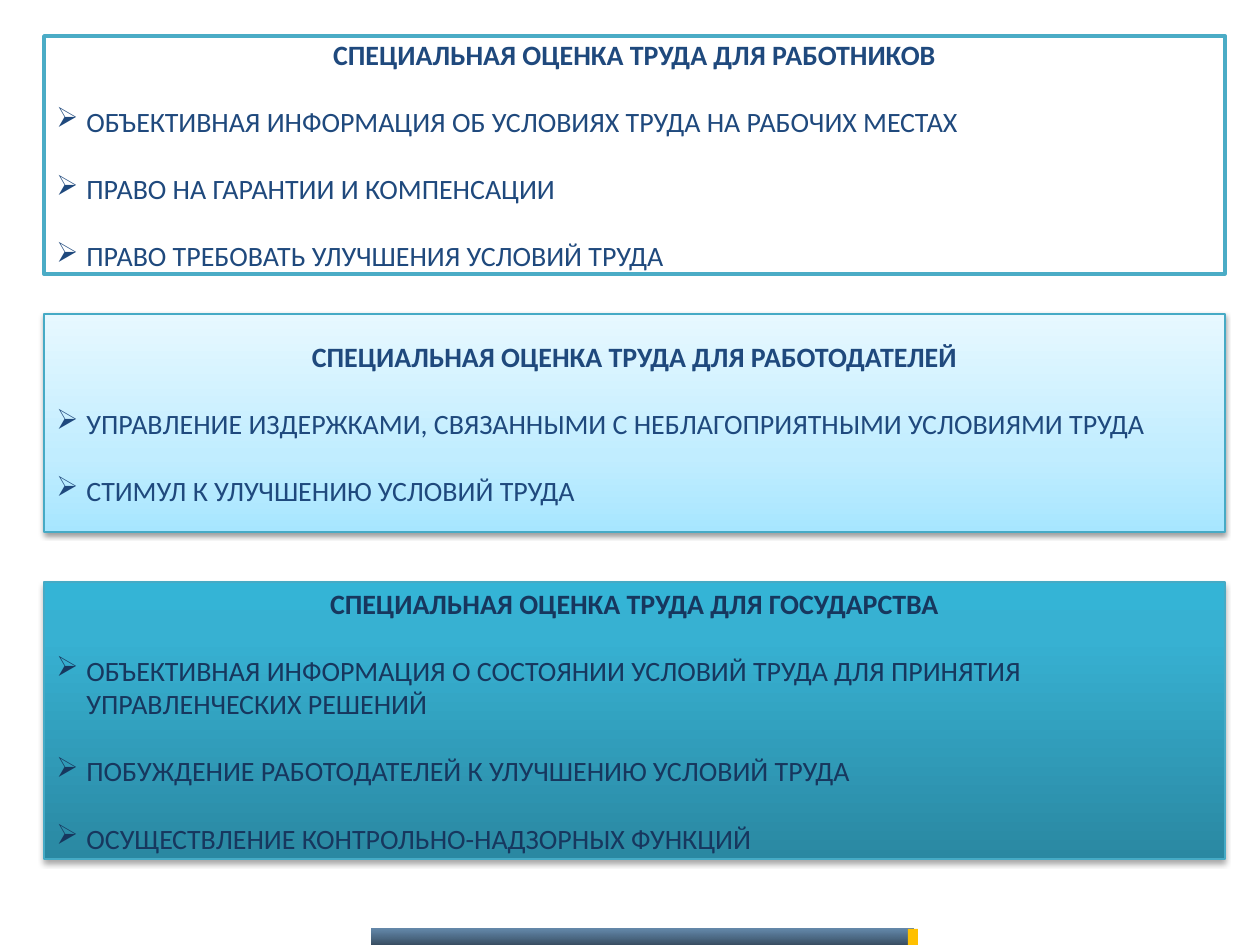
from dataclasses import dataclass

from pptx import Presentation
from pptx.dml.color import RGBColor
from pptx.enum.shapes import MSO_SHAPE
from pptx.enum.text import MSO_ANCHOR, PP_ALIGN
from pptx.oxml import parse_xml
from pptx.oxml.ns import nsdecls, qn
from pptx.util import Pt

PX = 914400 / 126


@dataclass(frozen=True)
class Theme:
    font: str = "Calibri"
    size: float = 16
    line_gap: float = 19.2
    navy: str = "1F497D"
    deep_navy: str = "17375E"
    white: str = "FFFFFF"
    teal: str = "4BACC6"
    teal_edge: str = "46AAC5"
    amber: str = "FFC000"
    pale_blue: tuple = ((0, "A7E6FF", 100), (35, "C1EDFF", 100), (100, "E7F8FF", 100))
    strong_blue: tuple = ((0, "2A88A2", 100), (80, "37B1D2", 100), (100, "34B4D6", 100))
    footer_blue: tuple = ((0, "003C73", 60), (100, "001C35", 80))


THEME = Theme()

PANELS = [
    {
        "box": (44, 36, 1181, 238),
        "heading": "СПЕЦИАЛЬНАЯ ОЦЕНКА ТРУДА ДЛЯ РАБОТНИКОВ",
        "benefits": [
            "ОБЪЕКТИВНАЯ ИНФОРМАЦИЯ ОБ УСЛОВИЯХ ТРУДА НА РАБОЧИХ МЕСТАХ",
            "ПРАВО НА ГАРАНТИИ И КОМПЕНСАЦИИ",
            "ПРАВО ТРЕБОВАТЬ УЛУЧШЕНИЯ УСЛОВИЙ ТРУДА",
        ],
        "fill": THEME.white, "edge": (THEME.teal, 2),
        "ink": THEME.navy, "shadow": None,
    },
    {
        "box": (44, 314, 1181, 218),
        "heading": "СПЕЦИАЛЬНАЯ ОЦЕНКА ТРУДА ДЛЯ РАБОТОДАТЕЛЕЙ",
        "benefits": [
            "УПРАВЛЕНИЕ ИЗДЕРЖКАМИ, СВЯЗАННЫМИ С НЕБЛАГОПРИЯТНЫМИ УСЛОВИЯМИ ТРУДА",
            "СТИМУЛ К УЛУЧШЕНИЮ УСЛОВИЙ ТРУДА",
        ],
        "fill": THEME.pale_blue, "edge": (THEME.teal_edge, 0.75),
        "ink": THEME.navy, "shadow": (38, 1.6),
    },
    {
        "box": (44, 582, 1181, 277),
        "heading": "СПЕЦИАЛЬНАЯ ОЦЕНКА ТРУДА ДЛЯ ГОСУДАРСТВА",
        "benefits": [
            "ОБЪЕКТИВНАЯ ИНФОРМАЦИЯ О СОСТОЯНИИ УСЛОВИЙ ТРУДА "
            "ДЛЯ ПРИНЯТИЯ УПРАВЛЕНЧЕСКИХ РЕШЕНИЙ",
            "ПОБУЖДЕНИЕ РАБОТОДАТЕЛЕЙ К УЛУЧШЕНИЮ УСЛОВИЙ ТРУДА",
            "ОСУЩЕСТВЛЕНИЕ КОНТРОЛЬНО-НАДЗОРНЫХ ФУНКЦИЙ",
        ],
        "fill": THEME.strong_blue, "edge": (THEME.teal_edge, 0.75),
        "ink": THEME.deep_navy, "shadow": (35, 1.8),
    },
]


def px(length):
    return round(length * PX)


def apply_format(target, values):
    for attribute, value in values.items():
        setattr(target, attribute, value)


def color_xml(color, opacity):
    return f'<a:srgbClr val="{color}"><a:alpha val="{opacity * 1000}"/></a:srgbClr>'


def fill_gradient(shape, stops, angle):
    stops_xml = "".join(
        f'<a:gs pos="{position * 1000}">{color_xml(color, opacity)}</a:gs>'
        for position, color, opacity in stops
    )
    geometry = shape._element.spPr.find(qn("a:prstGeom"))
    geometry.addnext(parse_xml(
        f'<a:gradFill {nsdecls("a")} rotWithShape="1"><a:gsLst>{stops_xml}</a:gsLst>'
        f'<a:lin ang="{angle * 60000}" scaled="0"/></a:gradFill>'
    ))


def add_block(slide, box, fill, angle=270):
    """Add a borderless rectangle; fill is a colour or a series of gradient stops."""
    block = slide.shapes.add_shape(MSO_SHAPE.RECTANGLE, *map(px, box))
    block.shadow.inherit = False
    block.line.fill.background()
    if isinstance(fill, str):
        block.fill.solid()
        block.fill.fore_color.rgb = RGBColor.from_string(fill)
    else:
        fill_gradient(block, fill, angle)
    return block


def cast_shadow(shape, opacity, distance):
    effects = shape._element.spPr.find(qn("a:effectLst"))
    effects.append(parse_xml(
        f'<a:outerShdw {nsdecls("a")} blurRad="{Pt(3.1)}" dist="{Pt(distance)}" '
        f'dir="5400000" rotWithShape="0">{color_xml("000000", opacity)}</a:outerShdw>'
    ))


def add_bullet(paragraph):
    properties = paragraph._p.get_or_add_pPr()
    properties.set("marL", str(px(30)))
    properties.set("indent", str(-px(30)))
    properties.append(parse_xml(f'<a:buChar {nsdecls("a")} char="➢"/>'))


def write_paragraph(paragraph, text, ink, **layout):
    apply_format(paragraph, layout)
    run = paragraph.add_run()
    run.text = text
    run.font.color.rgb = RGBColor.from_string(ink)
    apply_format(run.font, {
        "name": THEME.font,
        "size": Pt(THEME.size),
        "bold": layout["alignment"] == PP_ALIGN.CENTER,
    })


def add_panel(slide, box, heading, benefits, fill, edge, ink, shadow):
    panel = add_block(slide, box, fill)
    edge_color, edge_width = edge
    panel.line.color.rgb = RGBColor.from_string(edge_color)
    panel.line.width = Pt(edge_width)
    if shadow:
        cast_shadow(panel, *shadow)

    frame = panel.text_frame
    apply_format(frame, {"word_wrap": True, "vertical_anchor": MSO_ANCHOR.MIDDLE})
    write_paragraph(frame.paragraphs[0], heading, ink, alignment=PP_ALIGN.CENTER)
    for benefit in benefits:
        paragraph = frame.add_paragraph()
        add_bullet(paragraph)
        write_paragraph(paragraph, benefit, ink, alignment=PP_ALIGN.LEFT,
                        space_before=Pt(THEME.line_gap))


def add_footer(slide, box):
    left, top, width, height = box
    accent_width = 10
    add_block(slide, (left, top, width - 4, height), THEME.footer_blue, angle=90)
    add_block(slide, (left + width - accent_width, top, accent_width, height),
              THEME.amber)


def main():
    presentation = Presentation()
    apply_format(presentation, {"slide_width": px(1260), "slide_height": px(945)})
    slide = presentation.slides.add_slide(presentation.slide_layouts[6])
    add_footer(slide, (372, 929, 546, 16))
    for panel in PANELS:
        add_panel(slide, **panel)
    presentation.save("out.pptx")


if __name__ == "__main__":
    main()
